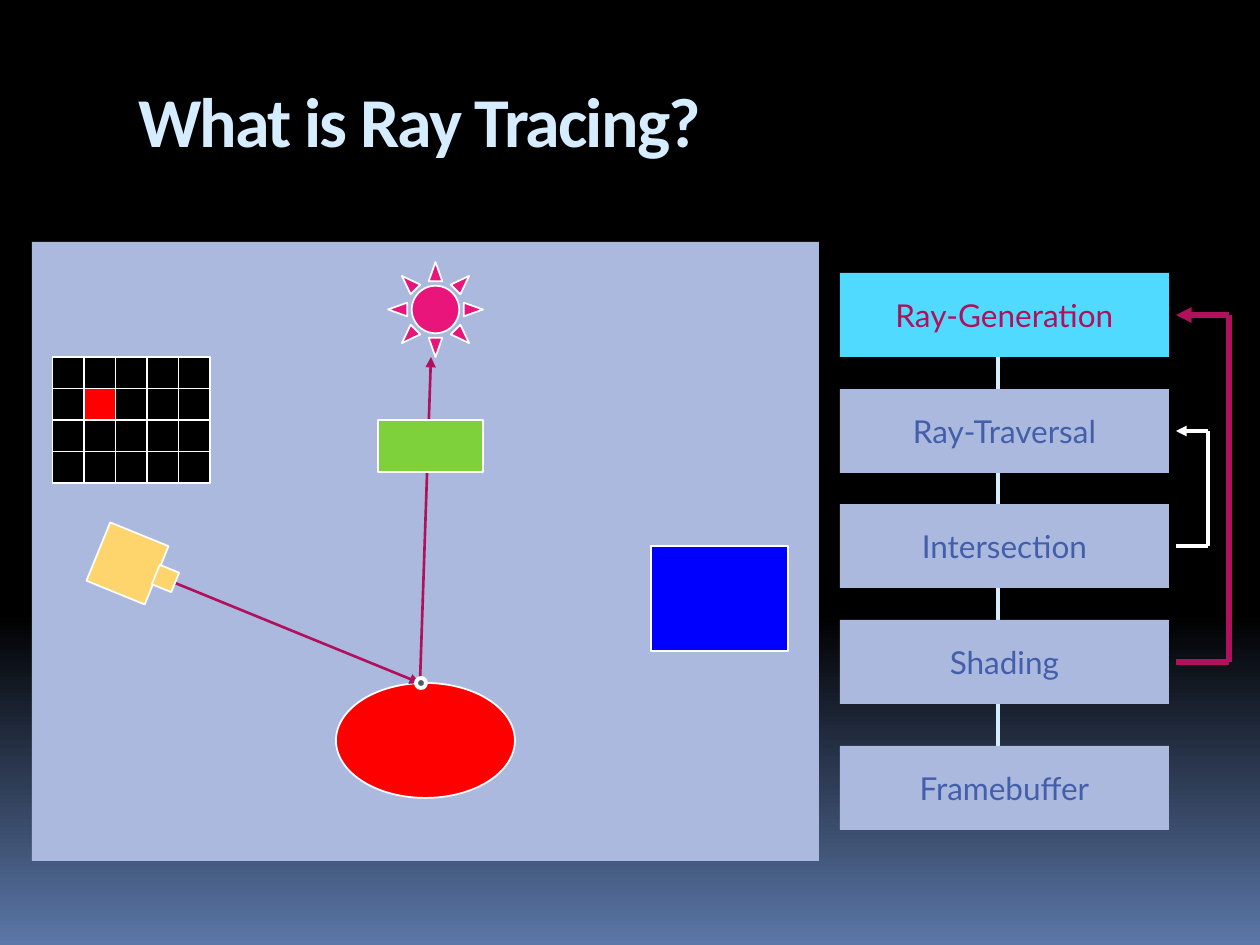
from itertools import pairwise

from lxml import etree
from pptx import Presentation
from pptx.dml.color import RGBColor
from pptx.enum.shapes import MSO_CONNECTOR, MSO_SHAPE
from pptx.enum.text import MSO_ANCHOR, PP_ALIGN
from pptx.oxml.ns import qn
from pptx.util import Pt

EMU_PER_PX = 914400 / 126
RECTANGLE, ELLIPSE, SUN = MSO_SHAPE.RECTANGLE, MSO_SHAPE.OVAL, MSO_SHAPE.SUN
STRAIGHT = MSO_CONNECTOR.STRAIGHT
MIDDLE, TOP = MSO_ANCHOR.MIDDLE, MSO_ANCHOR.TOP
CENTER = PP_ALIGN.CENTER

COLORS = {
    "black": "000000",
    "white": "FFFFFF",
    "horizon": "5B77A8",
    "panel": "ABB9DE",
    "ice": "D6ECFF",
    "active": "51DAFF",
    "label": "435EAA",
    "ray": "B0105C",
    "sun": "EA157A",
    "red": "FF0000",
    "blue": "0000FF",
    "green": "7FD13B",
    "camera": "FED46C",
    "hit": "4E5B6F",
}

STAGES = [
    ("Ray-Generation", 273),
    ("Ray-Traversal", 389),
    ("Intersection", 504),
    ("Shading", 620),
    ("Framebuffer", 746),
]


def px(length):
    return round(length * EMU_PER_PX)


def rgb(name):
    return RGBColor.from_string(COLORS[name])


def add_shape(shapes, kind, place, fill, outline=1, rotation=0):
    """Add a filled shape; an outline of 0 points means none."""
    shape = shapes.add_shape(kind, *map(px, place))
    shape.shadow.inherit = False
    shape.rotation = rotation
    shape.fill.solid()
    shape.fill.fore_color.rgb = rgb(fill)
    if outline:
        shape.line.color.rgb = rgb("white")
        shape.line.width = Pt(outline)
    else:
        shape.line.fill.background()
    return shape


def add_line(shapes, start, end, color, width, arrow=False):
    line = shapes.add_connector(STRAIGHT, *map(px, start + end))
    line.line.color.rgb = rgb(color)
    line.line.width = Pt(width)
    if arrow:
        outline = line.line._get_or_add_ln()
        etree.SubElement(outline, qn("a:tailEnd"), type="triangle")
    etree.SubElement(line._element.spPr, qn("a:effectLst"))


def write(frame, text, font_name, size, color):
    para = frame.paragraphs[0]
    para.text = text
    para.font.name = font_name
    para.font.size = Pt(size)
    para.font.color.rgb = rgb(color)
    return para


def paint_background(page):
    fill = page.background.fill
    fill.gradient()
    fill.gradient_angle = 270
    settings = [("black", 0.65), ("horizon", 1)]
    for stop, (color, position) in zip(fill.gradient_stops, settings):
        stop.color.rgb = rgb(color)
        stop.position = position


def add_title(page):
    box = page.shapes.add_textbox(px(126), px(71), px(1071), px(126))
    frame = box.text_frame
    frame.word_wrap = True
    frame.vertical_anchor = TOP
    para = write(frame, "What is Ray Tracing?", "Calibri", 40, "ice")
    para.font.bold = True
    para.runs[0].font._element.set("spc", "-100")


def add_stage(page, label, top, active):
    place = (840, top, 329, 84)
    box = add_shape(page.shapes, RECTANGLE, place, "active" if active else "panel", 0)
    frame = box.text_frame
    frame.word_wrap = False
    frame.vertical_anchor = MIDDLE
    para = write(frame, label, "Lato", 18, "ray" if active else "label")
    para.alignment = CENTER


def add_pipeline(page):
    add_line(page.shapes, (998, 357), (998, 756), "ice", 2.25)
    for index, (label, top) in enumerate(STAGES):
        add_stage(page, label, top, active=index == 0)


def add_camera(page):
    shapes = page.shapes.add_group_shape().shapes
    for place in [(96, 532, 63, 63), (155, 568, 21, 21)]:
        add_shape(shapes, RECTANGLE, place, "camera", rotation=22.2)


def add_pixel_grid(page):
    left, top, cell = 52.5, 357, 31.5
    for row in range(4):
        for column in range(5):
            place = (left + column * cell, top + row * cell, cell, cell)
            add_shape(page.shapes, RECTANGLE, place, "black")
    add_shape(page.shapes, RECTANGLE, (left + cell, top + cell, cell, cell), "red")


def add_loop(page, bottom, top, right, color, width):
    """Draw a bracket that leads from a stage back to an earlier one."""
    shapes = page.shapes.add_group_shape().shapes
    corners = [(1176, bottom), (right, bottom), (right, top), (1176, top)]
    for index, (start, end) in enumerate(pairwise(corners)):
        add_line(shapes, start, end, color, width, arrow=index == 2)


def add_scene(page):
    shapes = page.shapes
    hit_point = (420, 683)
    add_shape(shapes, ELLIPSE, (336, 683, 179, 115), "red")
    add_shape(shapes, SUN, (388, 262, 95, 95), "sun")
    add_shape(shapes, RECTANGLE, (651, 546, 137, 105), "blue")
    add_line(shapes, (136, 567), hit_point, "ray", 1.5, arrow=True)
    add_camera(page)
    add_pixel_grid(page)
    add_line(shapes, hit_point, (431, 357), "ray", 1.5, arrow=True)
    add_shape(shapes, RECTANGLE, (378, 420, 105, 52), "green")
    add_shape(shapes, ELLIPSE, (416, 678, 10, 10), "hit", 2.25)


def main():
    deck = Presentation()
    deck.slide_width, deck.slide_height = px(1260), px(945)
    page = deck.slides.add_slide(deck.slide_layouts[6])
    paint_background(page)
    add_shape(page.shapes, RECTANGLE, (32, 242, 787, 619), "panel", 0)
    add_pipeline(page)
    add_scene(page)
    add_loop(page, 662, 315, 1229, "ray", 3)
    add_loop(page, 546, 431, 1208, "white", 2)
    add_title(page)
    deck.save("out.pptx")


if __name__ == "__main__":
    main()
